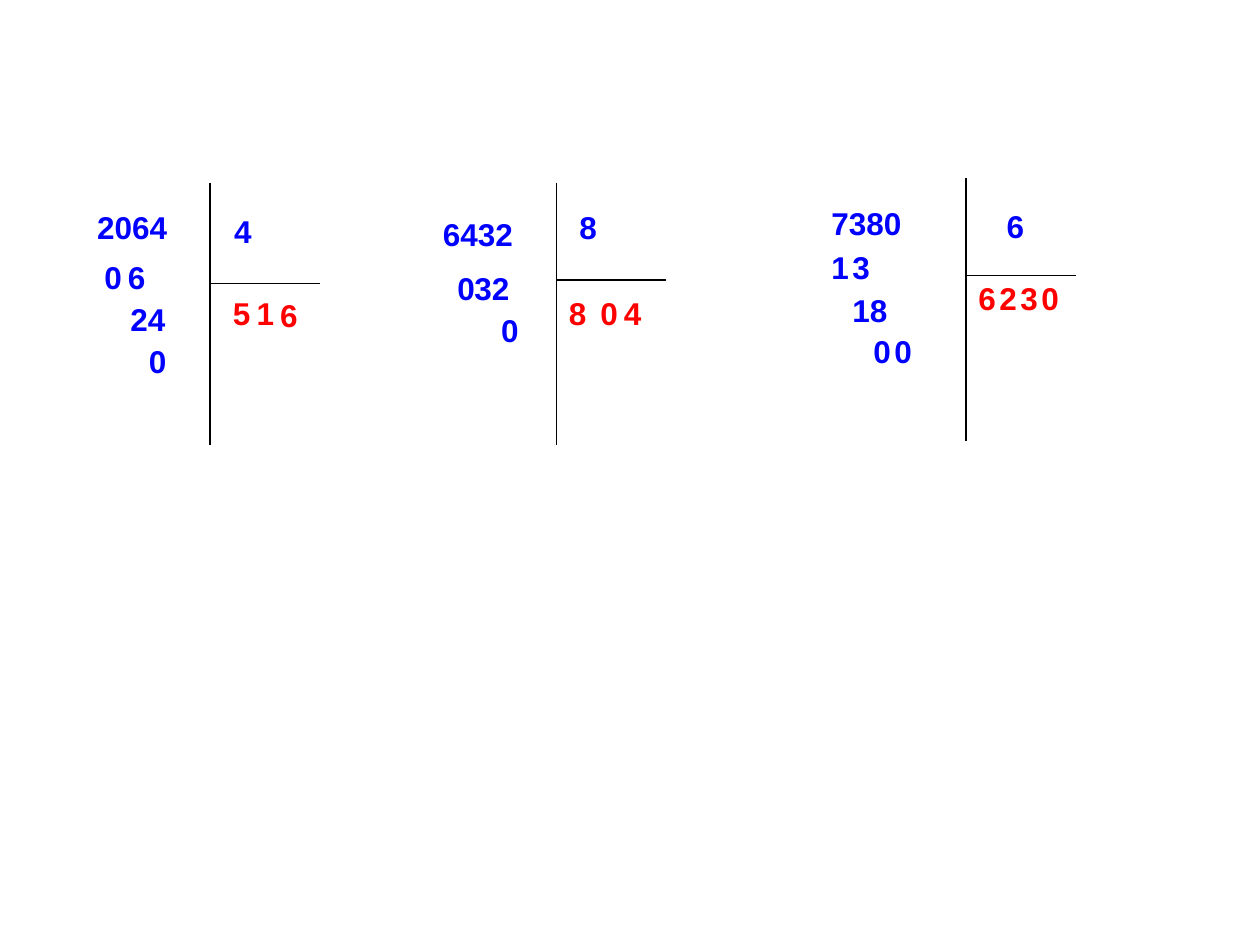
from pptx import Presentation
from pptx.util import Pt
from pptx.dml.color import RGBColor
from pptx.enum import shapes, text
from lxml import etree

BLUE, RED, BLACK = "0000FF", "FF0000", "000000"
HIGH, BAR, RULE = 28.8, 149.8, 62.6

SUMS = [
    {"bar": (318, 104.4), "rule": 160,
     "head": [("6432", 246, 119.5, 66.2), ("8", 324, 115.6, 49.7)],
     "answer": [("8", 318, 164.2, 27.4), ("0", 336, 164.2, 27.4),
                ("4", 349.5, 164.2, 36)],
     "work": [("0", 254.2, 150, 18), ("32", 264, 150, 36),
              ("0", 279.2, 174.2, 27.4)]},
    {"bar": (120, 104.4), "rule": 162,
     "head": [("2064", 48.4, 115.6, 65.5), ("4", 126.7, 117.4, 49.7)],
     "answer": [("5", 126, 164.2, 27.4), ("1", 139.5, 164.2, 27.4)],
     "work": [("0", 52.5, 144, 20.9), ("24", 67.5, 168, 36),
              ("0", 78, 192.2, 27.4)]},
    {"bar": (552, 102), "rule": 157.5,
     "head": [("7380", 468, 113, 76.3), ("6", 568.1, 115, 49.7)],
     "answer": [("6", 552, 156.2, 27.4), ("2", 564, 156.2, 27.4),
                ("3", 576, 156.2, 43.2)],
     "work": [("1", 468, 138.2, 14.4), ("18", 480, 162.7, 36),
              ("3", 480, 138.2, 31.7), ("0", 492, 186, 27.4)]},
]
LAST = [("6", 153, 165.6, 36, RED), ("0", 504, 186, 27.4, BLUE),
        ("6", 66, 144, 36, BLUE), ("0", 588, 156.2, 36, RED)]


def paint(code):
    return RGBColor.from_string(code)


def write(slide, words, x, y, wide, color=BLUE, size=18, bold=True, face="Arial"):
    box = slide.shapes.add_textbox(Pt(x), Pt(y), Pt(wide), Pt(HIGH))
    frame = box.text_frame
    frame.word_wrap = True
    frame.auto_size = text.MSO_AUTO_SIZE.SHAPE_TO_FIT_TEXT
    run = frame.paragraphs[0].add_run()
    run.text = words
    font = run.font
    font.name, font.size, font.bold = face, Pt(size), bold
    font.color.rgb = paint(color)


def stroke(slide, x, y, across=0, down=0):
    line = slide.shapes.add_connector(
        shapes.MSO_CONNECTOR.STRAIGHT, Pt(x), Pt(y), Pt(x + across), Pt(y + down))
    line.line.color.rgb = paint(BLACK)
    line.line.width = Pt(0.75)
    props = line._element.spPr
    space = props.nsmap["a"]
    etree.SubElement(props, f"{{{space}}}effectLst")


def main():
    deck = Presentation()
    deck.slide_width, deck.slide_height = Pt(720), Pt(540)
    slide = deck.slides.add_slide(deck.slide_layouts[6])
    for part in SUMS:
        x, y = part["bar"]
        for item in part["head"]:
            write(slide, *item)
        stroke(slide, x, y, down=BAR)
        stroke(slide, x, part["rule"], across=RULE)
        for key, color in (("answer", RED), ("work", BLUE)):
            for item in part[key]:
                write(slide, *item, color=color)
    for item in LAST:
        write(slide, *item)
    deck.save("out.pptx")


if __name__ == "__main__":
    main()
